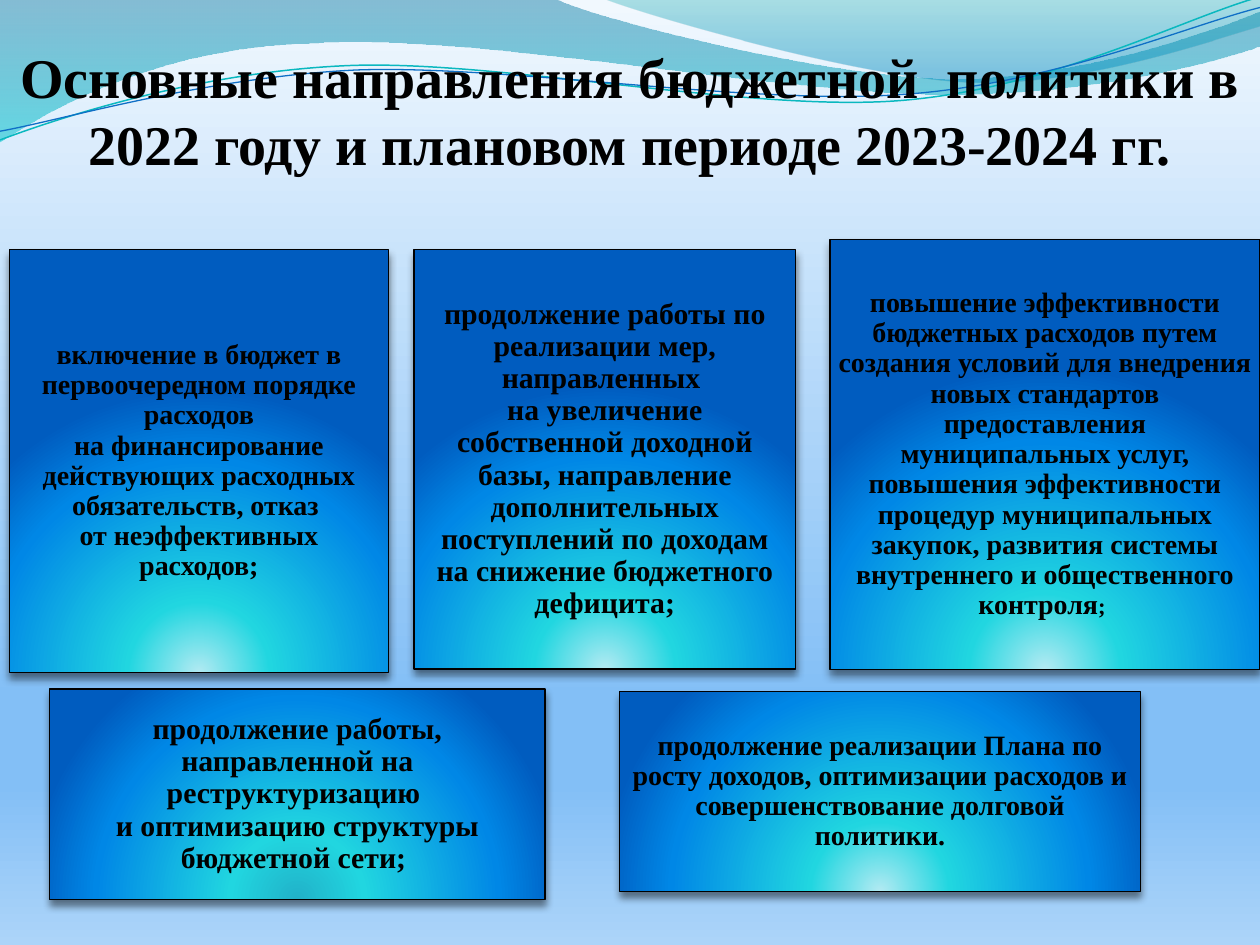
import math

import pptx
import pptx.dml.color
import pptx.enum.shapes
import pptx.enum.text
import pptx.oxml
import pptx.oxml.ns
import pptx.util

Pt = pptx.util.Pt
qn = pptx.oxml.ns.qn
NAMESPACE = pptx.oxml.ns.nsdecls("a")

FONT = "Times New Roman"
HARD_SPACE = chr(160)
TITLE = "Основные направления бюджетной  политики в 2022 году и плановом периоде 2023-2024 гг."
DOWNWARD = '<a:lin ang="5400000" scaled="0"/>'
FROM_BOTTOM = '<a:path path="circle"><a:fillToRect l="50000" t="100000" r="50000" b="0"/></a:path>'
BACKGROUND = [(0, "F1F8FE"), (74, "83BFF6"), (83, "83BFF6"), (100, "ACD4F9")]
BLUES = [(25, "21D6E0"), (75, "0087E6"), (100, "005CBF")]
PALE, TEAL = "B3EAF2", "21B2C9"

BANDS = [
    ([(0, "0074A1", 45), (100, "00C6CF", 55)], (-0.7, -0.7), [
        [(317, -0.7)],
        [(343, 12), (478, 45), (546, 45)],
        [(614, 45), (690, 19), (720, 6.5)],
        [(720.7, 26)],
        [(708, 32), (626, 55), (537, 54)],
        [(448, 54), (275, 20), (185, 24.5)],
        [(93, 26), (33, 60), (-0.7, 81.4)],
    ]),
    ([(0, "00A1A9", 30), (80, "008BBF", 45)], (345, -0.7), [
        [(366, 8), (491, 44.6), (554, 47)],
        [(616, 49.7), (692, 23), (720, 15)],
        [(720, -0.7)],
    ]),
]
WAVE_TILT = -2.7
WAVES = [
    ("0AB8BF", 0.85, (359.3, 41.4), (0, 80), [
        [(34.5, 67), (114, 41), (199, 37.5)],
        [(284, 34), (427, 64), (513, 57.6)],
        [(600, 51), (675, 11), (718.6, -1.4)],
    ]),
    ("0F6FC6", 0.75, (359.6, 42.5), (0, 75), [
        [(34, 69), (118, 44), (204, 40)],
        [(290, 37), (430, 60.5), (516, 54)],
        [(602, 48), (677.5, 15), (720, 4.3)],
    ]),
]
BOXES = [
    ((5.3, 142.6, 216.7, 241.9), 16, PALE, [
        f"включение в бюджет в первоочередном порядке расходов на{HARD_SPACE}финансирование "
        "действующих расходных обязательств, отказ \nот неэффективных расходов;"]),
    ((236.6, 142.6, 218, 239.8), 17, PALE, [
        "продолжение работы по реализации мер, направленных \nна увеличение собственной "
        f"доходной базы, направление дополнительных поступлений по{HARD_SPACE}доходам "
        "на снижение бюджетного дефицита;"]),
    ((474.2, 137, 245.8, 245.5), 16, PALE, [
        "повышение эффективности бюджетных расходов путем создания условий для внедрения "
        "новых стандартов предоставления муниципальных услуг, повышения эффективности "
        "процедур муниципальных закупок, развития системы внутреннего "
        f"и{HARD_SPACE}общественного контроля",
        "; "]),
    ((28.4, 393.8, 283, 120.2), 17, TEAL, [
        "продолжение работы, направленной на реструктуризацию \n"
        "и оптимизацию структуры бюджетной сети; "]),
    ((354.2, 395.2, 297.4, 114.2), 16, PALE, [
        "продолжение реализации Плана по росту доходов, оптимизации расходов "
        "и совершенствование долговой политики."]),
]


def color(value):
    return pptx.dml.color.RGBColor.from_string(value)


def set_gradient(fill, properties, stops, direction):
    fill.solid()
    marks = ""
    for position, value, *opacity in stops:
        alpha = f'<a:alpha val="{opacity[0] * 1000}"/>' if opacity else ""
        marks += f'<a:gs pos="{position * 1000}"><a:srgbClr val="{value}">{alpha}</a:srgbClr></a:gs>'
    gradient = pptx.oxml.parse_xml(
        f'<a:gradFill {NAMESPACE} rotWithShape="1"><a:gsLst>{marks}</a:gsLst>{direction}</a:gradFill>')
    properties.replace(properties.find(qn("a:solidFill")), gradient)


def turn(point, center, degrees):
    angle = math.radians(degrees)
    x, y = point[0] - center[0], point[1] - center[1]
    return (center[0] + x * math.cos(angle) - y * math.sin(angle),
            center[1] + x * math.sin(angle) + y * math.cos(angle))


def add_outline(slide, start, segments, close, center=(0, 0), tilt=0):
    points = [start] + [point for segment in segments for point in segment]
    points = [tuple(map(Pt, turn(point, center, -tilt))) for point in points]
    builder = slide.shapes.build_freeform(*points[0])
    builder.add_line_segments(points[1:], close=close)
    shape = builder.convert_to_shape()
    shape.rotation = tilt
    shape.shadow.inherit = False
    lines = iter(list(shape.element.iter(qn("a:lnTo"))))
    for segment in segments:
        parts = [next(lines) for _ in segment]
        if len(parts) == 3:
            curve = pptx.oxml.parse_xml(f"<a:cubicBezTo {NAMESPACE}/>")
            parts[0].addprevious(curve)
            for part in parts:
                curve.append(part[0])
                part.getparent().remove(part)
    return shape


def format_paragraph(paragraph, size):
    paragraph.alignment = pptx.enum.text.PP_ALIGN.CENTER
    font = paragraph.font
    font.name, font.size, font.bold = FONT, Pt(size), True
    font.color.rgb = color("000000")


def set_margins(frame, left, top, right, bottom):
    frame.margin_left, frame.margin_top = Pt(left), Pt(top)
    frame.margin_right, frame.margin_bottom = Pt(right), Pt(bottom)
    frame.word_wrap = True


def add_box(slide, bounds, size, center, texts):
    shape = slide.shapes.add_shape(pptx.enum.shapes.MSO_SHAPE.RECTANGLE, *map(Pt, bounds))
    properties = shape.element.spPr
    set_gradient(shape.fill, properties, [(0, center), *BLUES], FROM_BOTTOM)
    shape.line.color.rgb = color("000000")
    shape.line.width = Pt(0.75)
    shape.shadow.inherit = False
    properties.find(qn("a:effectLst")).append(pptx.oxml.parse_xml(
        f'<a:outerShdw {NAMESPACE} blurRad="{Pt(4.5)}" dist="{Pt(3)}" dir="5400000" rotWithShape="0">'
        '<a:srgbClr val="000000"><a:alpha val="48000"/></a:srgbClr></a:outerShdw>'))
    frame = shape.text_frame
    set_margins(frame, *[size * 0.3] * 4)
    frame.vertical_anchor = pptx.enum.text.MSO_ANCHOR.MIDDLE
    paragraph = frame.paragraphs[0]
    paragraph.text = texts[0]
    paragraph.line_spacing = 0.9
    format_paragraph(paragraph, size)
    for ending in texts[1:]:
        run = paragraph.add_run()
        run.text = ending
        run.font.size = Pt(13)


def main():
    presentation = pptx.Presentation()
    presentation.slide_width, presentation.slide_height = Pt(720), Pt(540)
    slide = presentation.slides.add_slide(presentation.slide_layouts[5])
    background = slide.background.fill
    background.solid()
    set_gradient(background, slide.element.find(".//" + qn("p:bgPr")), BACKGROUND, DOWNWARD)

    for stops, start, segments in BANDS:
        band = add_outline(slide, start, segments, True)
        set_gradient(band.fill, band.element.spPr, stops, DOWNWARD)
        band.line.fill.background()
    for value, width, center, start, segments in WAVES:
        wave = add_outline(slide, start, segments, False, center, WAVE_TILT)
        wave.fill.background()
        wave.line.color.rgb = color(value)
        wave.line.width = Pt(width)

    title = slide.shapes.title
    title.left, title.top, title.width, title.height = map(Pt, (0, 19.8, 720, 81.4))
    title.text_frame.text = TITLE
    set_margins(title.text_frame, 0, 3.6, 0, 0)
    title.text_frame.auto_size = pptx.enum.text.MSO_AUTO_SIZE.NONE
    title.text_frame.vertical_anchor = pptx.enum.text.MSO_ANCHOR.BOTTOM
    format_paragraph(title.text_frame.paragraphs[0], 32)
    title.element.getparent().append(title.element)

    for box in BOXES:
        add_box(slide, *box)
    presentation.save("out.pptx")


if __name__ == "__main__":
    main()
